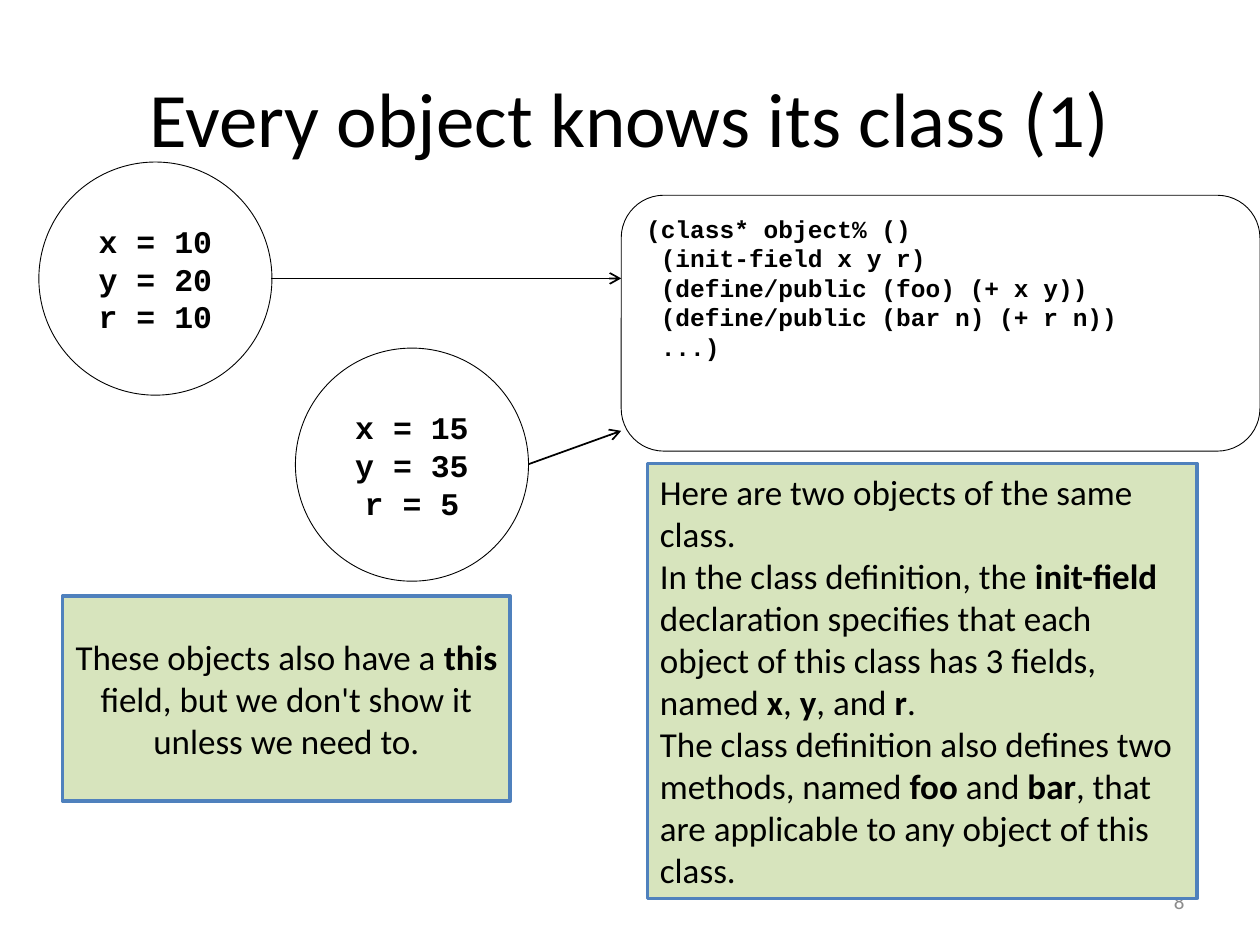
from pptx import Presentation
from pptx.dml.color import RGBColor
from pptx.enum.shapes import MSO_CONNECTOR, MSO_SHAPE
from pptx.enum.text import MSO_ANCHOR, PP_ALIGN
from pptx.oxml.ns import qn
from pptx.util import Pt
from lxml.etree import SubElement

BLACK = RGBColor(0, 0, 0)
GREY = RGBColor(0x8C, 0x8C, 0x8C)
GREEN = RGBColor(0xD7, 0xE4, 0xBD)
BLUE = RGBColor(0x4F, 0x81, 0xBD)
LEFT, MID, RIGHT = PP_ALIGN.LEFT, PP_ALIGN.CENTER, PP_ALIGN.RIGHT
CODE = "Courier New"


def write(shape, paras, size, align, font="Calibri", color=BLACK, bold=False,
          anchor=MSO_ANCHOR.MIDDLE):
    """Fill a shape with text; every second run of a paragraph is bold."""
    frame = shape.text_frame
    frame.word_wrap = True
    frame.vertical_anchor = anchor
    for i, runs in enumerate(paras):
        para = frame.add_paragraph() if i else frame.paragraphs[0]
        para.alignment = align
        for j, text in enumerate(runs):
            run = para.add_run()
            run.text = text
            run.font.name = font
            run.font.size = Pt(size)
            run.font.bold = bold or j % 2 == 1
            run.font.color.rgb = color


def draw(kind, box, line, width, fill=None):
    """Add a flat outlined shape, filled if a colour is given."""
    shape = slide.shapes.add_shape(kind, *map(Pt, box))
    shape.shadow.inherit = False
    shape.line.color.rgb = line
    shape.line.width = Pt(width)
    if fill is None:
        shape.fill.background()
    else:
        shape.fill.solid()
        shape.fill.fore_color.rgb = fill
    return shape


deck = Presentation()
deck.slide_width, deck.slide_height = Pt(720), Pt(540)
slide = deck.slides.add_slide(deck.slide_layouts[6])

# Title and page number
title = slide.shapes.add_textbox(Pt(36), Pt(21.6), Pt(648), Pt(90))
write(title, [["Every object knows its class (1)"]], 44, MID)
page = slide.shapes.add_textbox(Pt(516.2), Pt(500.4), Pt(167.8), Pt(28.8))
write(page, [["8"]], 12, RIGHT, color=GREY)

# Objects
SIZE = 133.2
for x, y, fields in [
    (22.2, 92.6, ["x = 10", "y = 20", "r = 10"]),
    (168.8, 198.9, ["x = 15", "y = 35", "r = 5"]),
]:
    disc = draw(MSO_SHAPE.OVAL, (x, y, SIZE, SIZE), BLACK, 0.5)
    write(disc, [[f] for f in fields], 18, MID, CODE, bold=True)

# Class definition
code = [
    "(class* object% ()",
    " (init-field x y r)",
    " (define/public (foo) (+ x y))",
    " (define/public (bar n) (+ r n))",
    " ...)",
]
card = draw(MSO_SHAPE.ROUNDED_RECTANGLE, (355, 111.6, 365, 146.2), BLACK, 0.5)
write(card, [[c] for c in code], 14, LEFT, CODE, bold=True,
      anchor=MSO_ANCHOR.TOP)

# Arrows from each object to its class
for ends in [(155, 159.1, 355, 159.1), (301.9, 265.3, 355, 246.2)]:
    arrow = slide.shapes.add_connector(MSO_CONNECTOR.STRAIGHT, *map(Pt, ends))
    arrow.line.color.rgb = BLACK
    arrow.line.width = Pt(1)
    SubElement(arrow.line._get_or_add_ln(), qn("a:tailEnd"), type="arrow")
    SubElement(arrow._element.spPr, qn("a:effectLst"))

# Notes
about = [
    ["Here are two objects of the same class."],
    ["In the class definition, the ", "init-field",
     " declaration specifies that each object of this class has 3 fields, named ",
     "x", ", ", "y", ", and ", "r", "."],
    ["The class definition also defines two methods, named ", "foo", " and ",
     "bar", ", that are applicable to any object of this class."],
]
this = [["These objects also have a ", "this",
         " field, but we don't show it unless we need to."]]
for box, paras, align in [
    ((370, 264.8, 314, 248.6), about, LEFT),
    ((35.8, 340.6, 255.8, 117.2), this, MID),
]:
    note = draw(MSO_SHAPE.RECTANGLE, box, BLUE, 2, GREEN)
    write(note, paras, 20, align)

deck.save("out.pptx")
